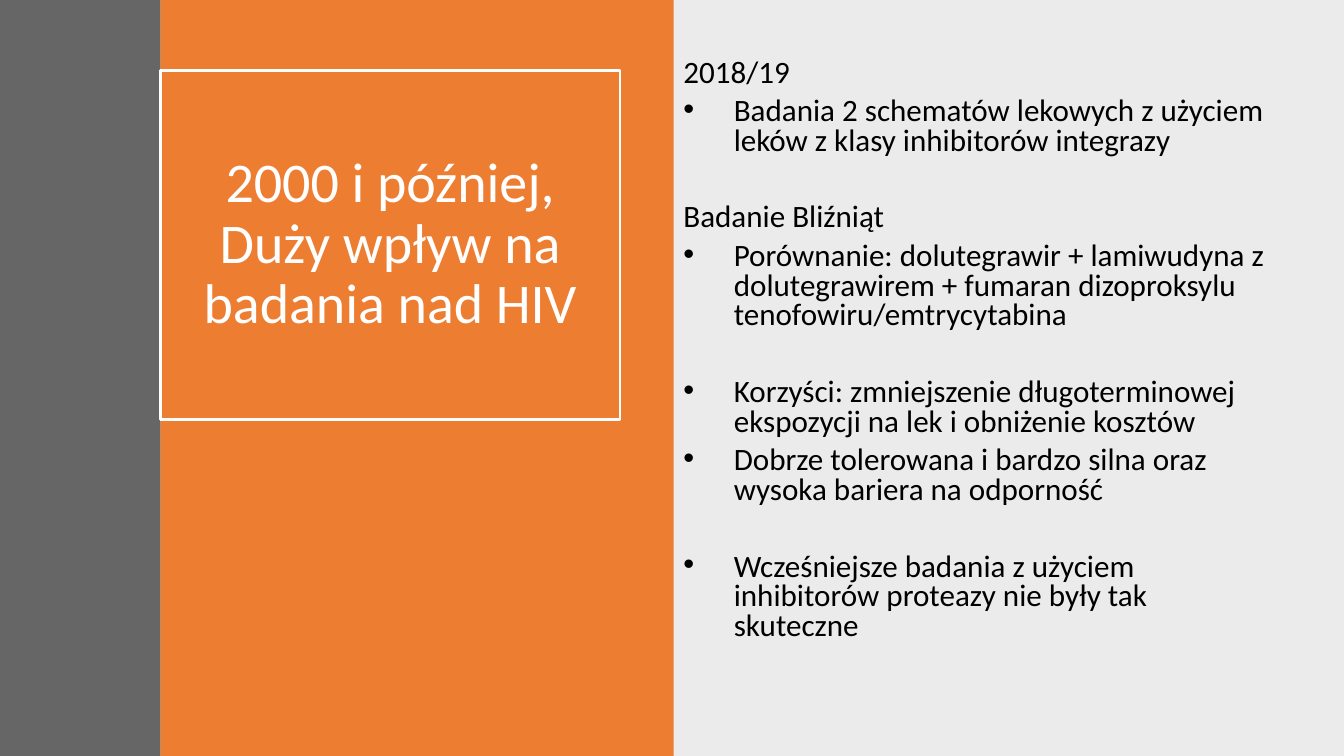
"""Build the slide on HIV research from 2000 onwards."""
from lxml import etree
from pptx import Presentation
from pptx.dml.color import RGBColor
from pptx.enum.shapes import MSO_SHAPE as SHAPE
from pptx.enum.text import MSO_ANCHOR as ANCHOR, PP_ALIGN as ALIGN
from pptx.oxml.ns import qn
from pptx.util import Inches, Pt

COLORS = {"black": "000000", "orange": "ED7D31", "gray": "404040", "white": "FFFFFF"}
BODY_GAP, SECTION_GAP = 6, 33.4
BULLET_INDENT = Inches(0.5)

PANELS = [
    (6.67, 6.67, "black", 8),
    (1.59, 5.09, "orange", 100),
    (0, 1.59, "gray", 80),
]
BODY = [
    ("2018/19", False, BODY_GAP),
    ("Badania 2 schematów lekowych z użyciem leków z klasy inhibitorów integrazy", True, SECTION_GAP),
    ("Badanie Bliźniąt", False, BODY_GAP),
    ("Porównanie: dolutegrawir + lamiwudyna z dolutegrawirem + fumaran dizoproksylu "
     "tenofowiru/emtrycytabina", True, SECTION_GAP),
    ("Korzyści: zmniejszenie długoterminowej ekspozycji na lek i obniżenie kosztów", True, BODY_GAP),
    ("Dobrze tolerowana i bardzo silna oraz wysoka bariera na odporność", True, SECTION_GAP),
    ("Wcześniejsze badania z użyciem inhibitorów proteazy nie były tak skuteczne", True, BODY_GAP),
]


def add_text(p, text, size, color, para_format):
    for name, value in para_format.items():
        setattr(p, name, value)
    r = p.add_run()
    r.text = text
    for name, value in {"name": "Calibri", "size": Pt(size)}.items():
        setattr(r.font, name, value)
    r.font.color.rgb = RGBColor.from_string(COLORS[color])


prs = Presentation()
prs.slide_width, prs.slide_height = Inches(13.33), Inches(7.5)
s = prs.slides.add_slide(prs.slide_layouts[6])

for left, width, color, opacity in PANELS:
    sp = s.shapes.add_shape(SHAPE.RECTANGLE, Inches(left), 0, Inches(width), prs.slide_height)
    sp.shadow.inherit = False
    sp.line.fill.background()
    sp.fill.solid()
    sp.fill.fore_color.rgb = RGBColor.from_string(COLORS[color])
    if opacity < 100:
        clr = sp.fill._xPr.find(qn("a:solidFill")).find(qn("a:srgbClr"))
        etree.SubElement(clr, qn("a:alpha")).set("val", str(opacity * 1000))

title = s.shapes.add_shape(SHAPE.RECTANGLE, Inches(1.59), Inches(0.7), Inches(4.56), Inches(3.46))
title.shadow.inherit = False
title.fill.background()
title.line.color.rgb = RGBColor.from_string(COLORS["white"])
title.line.width = Pt(2)
tf = title.text_frame
tf.word_wrap = True
tf.vertical_anchor = ANCHOR.MIDDLE
add_text(tf.paragraphs[0], "2000 i później, Duży wpływ na badania nad HIV", 40, "white",
         {"alignment": ALIGN.CENTER, "line_spacing": 0.9})

body = s.shapes.add_textbox(Inches(6.68), Inches(0.54), Inches(6.03), Inches(6.26))
tf = body.text_frame
tf.word_wrap = True
for i, (text, bulleted, gap) in enumerate(BODY):
    p = tf.add_paragraph() if i else tf.paragraphs[0]
    add_text(p, text, 22.2, "black", {"line_spacing": 0.8, "space_after": Pt(gap)})
    if bulleted:
        pPr = p._p.get_or_add_pPr()
        pPr.set("marL", str(BULLET_INDENT))
        pPr.set("indent", str(-BULLET_INDENT))
        etree.SubElement(pPr, qn("a:buFont")).set("typeface", "Arial")
        etree.SubElement(pPr, qn("a:buChar")).set("char", "•")

prs.save("out.pptx")
